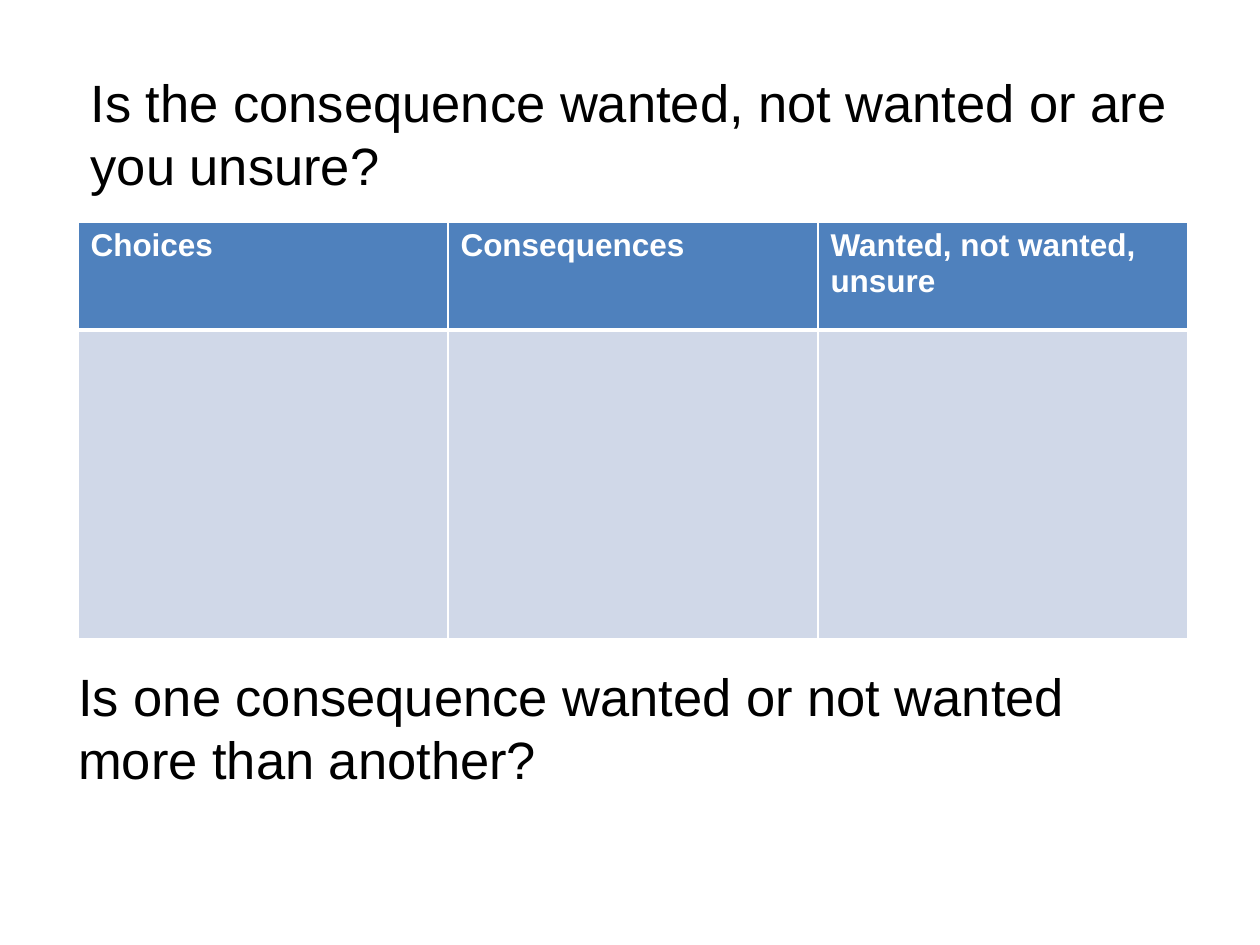
"""Build a slide for weighing choices by their consequences."""
from dataclasses import dataclass

from lxml import etree
from pptx import Presentation, util as u
from pptx.dml.color import RGBColor
from pptx.enum import text
from pptx.oxml import ns

EMU_PER_PX = 914400 / 126
FONT = "Arial"
COLORS = {"ink": "000000", "header": "4F81BD", "body": "D0D8E8", "rule": "FFFFFF"}
HEADINGS = ["Choices", "Consequences", "Wanted, not wanted, unsure"]


@dataclass
class Box:
    left: int
    top: int
    width: int
    height: int

    def emu(self) -> tuple[u.Emu, ...]:
        return tuple(px(n) for n in (self.left, self.top, self.width, self.height))


@dataclass
class TableRow:
    labels: list[str]
    height: int
    fill: str
    top_rule: int
    bottom_rule: int


QUESTION = Box(78, 62, 1111, 160)
GRID = Box(78, 222, 1110, 417)
FOLLOW_UP = Box(66, 656, 1111, 160)
ROWS = [
    TableRow(HEADINGS, 108, "header", 1, 3),
    TableRow([""] * 3, 309, "body", 3, 1),
]


def px(length: int) -> u.Emu:
    return u.Emu(round(length * EMU_PER_PX))


def rgb(name: str) -> RGBColor:
    return RGBColor.from_string(COLORS[name])


def style_font(paragraph, size: int, color: str, bold: bool = False) -> None:
    font = paragraph.font
    font.name, font.size, font.bold = FONT, u.Pt(size), bold
    font.color.rgb = rgb(color)


def write_question(shape, box: Box, wording: str) -> None:
    shape.left, shape.top, shape.width, shape.height = box.emu()
    frame = shape.text_frame
    frame.text = wording
    frame.word_wrap = True
    frame.auto_size = text.MSO_AUTO_SIZE.NONE
    frame.vertical_anchor = text.MSO_ANCHOR.TOP
    frame.margin_top = px(8)
    paragraph = frame.paragraphs[0]
    paragraph.alignment = text.PP_ALIGN.LEFT
    paragraph.line_spacing = u.Pt(36)
    style_font(paragraph, 30, "ink")


def draw_rules(cell, row: TableRow) -> None:
    properties = cell._tc.get_or_add_tcPr()
    widths = {"lnL": 1, "lnR": 1, "lnT": row.top_rule, "lnB": row.bottom_rule}
    for side, points in widths.items():
        line = etree.SubElement(properties, ns.qn(f"a:{side}"), w=str(u.Pt(points)))
        fill = etree.SubElement(line, ns.qn("a:solidFill"))
        etree.SubElement(fill, ns.qn("a:srgbClr"), val=COLORS["rule"])


def add_choice_table(slide, box: Box, rows: list[TableRow]) -> None:
    count = len(HEADINGS)
    table = slide.shapes.add_table(len(rows), count, *box.emu()).table
    for column in table.columns:
        column.width = px(box.width // count)
    for row_index, row in enumerate(rows):
        table.rows[row_index].height = px(row.height)
        for cell, label in zip(table.rows[row_index].cells, row.labels):
            draw_rules(cell, row)
            cell.fill.solid()
            cell.fill.fore_color.rgb = rgb(row.fill)
            if label:
                cell.text = label
                style_font(cell.text_frame.paragraphs[0], 18, "rule", bold=True)


def main() -> None:
    deck = Presentation()
    deck.slide_width, deck.slide_height = px(1260), px(945)
    slide = deck.slides.add_slide(deck.slide_layouts[5])
    write_question(slide.shapes.title, QUESTION,
                   "Is the consequence wanted, not wanted or are you unsure?")
    add_choice_table(slide, GRID, ROWS)
    write_question(slide.shapes.add_textbox(*FOLLOW_UP.emu()), FOLLOW_UP,
                   "Is one consequence wanted or not wanted more than another?")
    deck.save("out.pptx")


if __name__ == "__main__":
    main()
